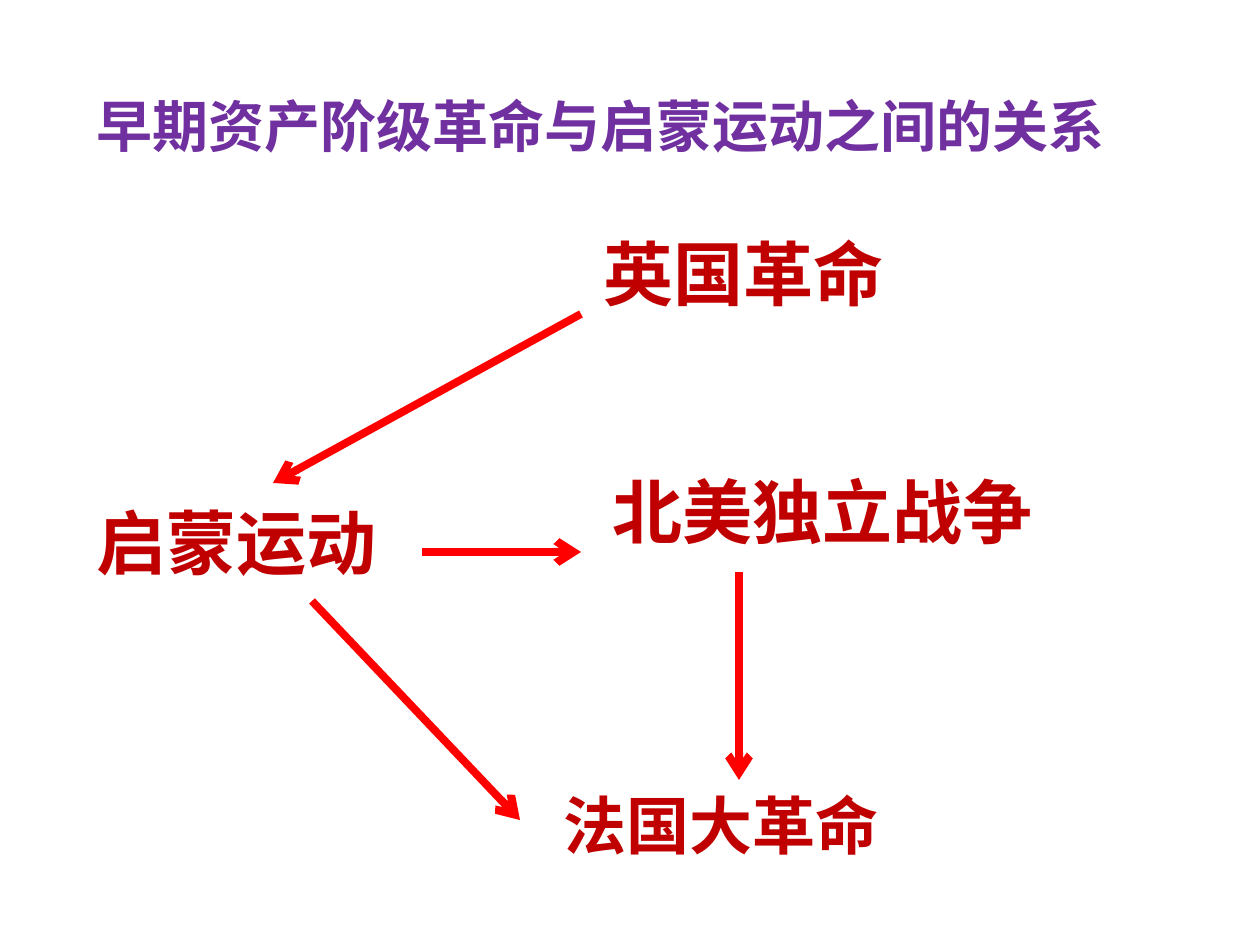
from lxml.etree import SubElement
from pptx import Presentation
from pptx.dml.color import RGBColor
from pptx.enum.shapes import MSO_CONNECTOR, MSO_SHAPE
from pptx.enum.text import MSO_ANCHOR, MSO_AUTO_SIZE, PP_ALIGN
from pptx.oxml.ns import qn
from pptx.util import Emu, Pt

PX_PER_INCH = 126
COLORS = {"title": "7030A0", "event": "C00000", "arrow": "FF0000", "paper": "FFFFFF"}


def px(length):
    return Emu(round(length * 914400 / PX_PER_INCH))


def color(name):
    return RGBColor.from_string(COLORS[name])


class Deck:
    """Holds the style and the current slide."""

    font = "Noto Sans CJK SC"
    arrow_width = Pt(4.5)

    def __init__(self, width, height):
        self.prs = Presentation()
        self.prs.slide_width, self.prs.slide_height = px(width), px(height)
        self.slide = self.prs.slides.add_slide(self.prs.slide_layouts[6])

    def add_wording(self, frame, wording, size, ink):
        frame.word_wrap = True
        line = frame.paragraphs[0]
        line.alignment = PP_ALIGN.LEFT
        run = line.add_run()
        run.text = wording
        run.font.name = self.font
        run.font.size = Pt(size)
        run.font.bold = True
        run.font.color.rgb = color(ink)
        # Chinese characters take the East Asian font
        SubElement(run._r.get_or_add_rPr(), qn("a:ea"), typeface=self.font)

    def title(self, wording, box, size):
        frame = self.slide.shapes.add_textbox(*map(px, box)).text_frame
        frame.vertical_anchor = MSO_ANCHOR.MIDDLE
        self.add_wording(frame, wording, size, "title")

    def event(self, wording, box, size):
        label = self.slide.shapes.add_shape(MSO_SHAPE.RECTANGLE, *map(px, box))
        label.shadow.inherit = False
        label.fill.solid()
        label.fill.fore_color.rgb = color("paper")
        label.line.fill.background()
        label.text_frame.vertical_anchor = MSO_ANCHOR.TOP
        label.text_frame.auto_size = MSO_AUTO_SIZE.SHAPE_TO_FIT_TEXT
        self.add_wording(label.text_frame, wording, size, "event")

    def arrow(self, start, end):
        influence = self.slide.shapes.add_connector(
            MSO_CONNECTOR.STRAIGHT, *map(px, start + end))
        influence.line.color.rgb = color("arrow")
        influence.line.width = self.arrow_width
        properties = influence._element.spPr
        SubElement(properties.find(qn("a:ln")), qn("a:tailEnd"), type="arrow")
        SubElement(properties, qn("a:effectLst"))

    def save(self):
        self.prs.save("out.pptx")


def main():
    deck = Deck(1260, 945)
    deck.title("早期资产阶级革命与启蒙运动之间的关系", (84, 28, 1060, 195), 32)

    influences = [
        ((581, 314), (273, 483)),  # English Revolution to Enlightenment
        ((422, 552), (581, 552)),  # Enlightenment to American independence
        ((312, 601), (520, 820)),  # Enlightenment to French Revolution
        ((739, 572), (739, 780)),  # American independence to French Revolution
    ]
    for start, end in influences:
        deck.arrow(start, end)

    events = [
        ("北美独立战争", (600, 462, 496, 97), 40),
        ("启蒙运动", (84, 493, 338, 97), 40),
        ("法国大革命", (551, 780, 407, 89), 36),
        ("英国革命", (591, 224, 357, 97), 40),
    ]
    for wording, box, size in events:
        deck.event(wording, box, size)

    deck.save()


if __name__ == "__main__":
    main()
